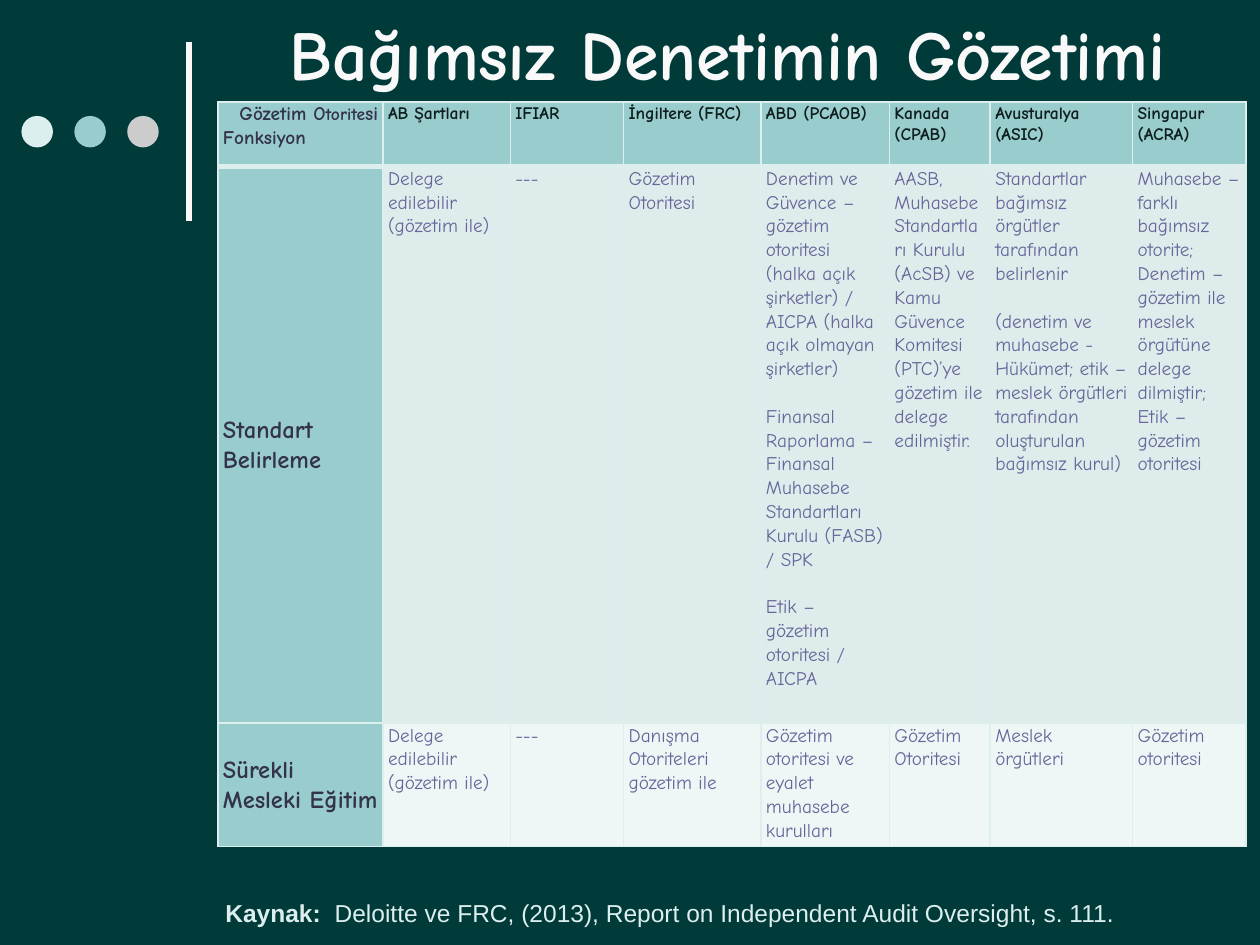
from lxml import etree
from pptx import Presentation
from pptx.dml.color import RGBColor
from pptx.enum import shapes, text
from pptx.oxml.ns import qn
from pptx.util import Inches, Pt

DARK_TEAL = RGBColor(0x00, 0x3B, 0x3A)
WHITE = RGBColor(0xF9, 0xF9, 0xF9)
PALE = RGBColor(0xDC, 0xEE, 0xEE)
TEAL = RGBColor(0x99, 0xCC, 0xCC)
GREY = RGBColor(0xCC, 0xCC, 0xCC)
BAND_DARK = RGBColor(0xDE, 0xEC, 0xEC)
BAND_LIGHT = RGBColor(0xEF, 0xF6, 0xF6)
INK = RGBColor(0x0F, 0x1F, 0x1F)
NAVY = RGBColor(0x33, 0x33, 0x4C)
VIOLET = RGBColor(0x66, 0x66, 0x99)

COMIC = "Comic Neue"
LEFT, CENTER, RIGHT, JUSTIFY = (
    text.PP_ALIGN.LEFT, text.PP_ALIGN.CENTER, text.PP_ALIGN.RIGHT, text.PP_ALIGN.JUSTIFY)
MIDDLE, TOP = text.MSO_ANCHOR.MIDDLE, text.MSO_ANCHOR.TOP

TITLE = dict(name=COMIC, size=Pt(40), bold=True, color=WHITE)
CORNER = dict(name=COMIC, size=Pt(11), bold=True, color=NAVY)
HEADER = dict(name=COMIC, size=Pt(10), bold=True, color=INK)
FUNCTION = dict(name=COMIC, size=Pt(14), bold=True, color=NAVY)
BODY = dict(name=COMIC, size=Pt(11), bold=False, color=VIOLET)
SOURCE = dict(name="Arial", size=Pt(14), bold=False, color=PALE)

LINE_SPACING = 1.07
BLOCK_GAP = Pt(13.6)  # one body line

COLUMNS = [1.31, 1.01, 0.9, 1.09, 1.02, 0.8, 1.13, 0.9]
ROWS = [0.51, 4.42, 0.91]
AUTHORITIES = ["AB Şartları", "IFIAR", "İngiltere (FRC)", "ABD (PCAOB)",
               "Kanada (CPAB)", "Avusturalya (ASIC)", "Singapur (ACRA)"]
# Each cell is a list of blocks; each block is a list of paragraphs.
FUNCTIONS = [
    ("Standart Belirleme", BAND_DARK, [
        [["Delege edilebilir (gözetim ile)"]],
        [["---"]],
        [["Gözetim Otoritesi"]],
        [["Denetim ve Güvence – gözetim otoritesi (halka açık şirketler) / "
          "AICPA (halka açık olmayan şirketler)"],
         ["Finansal Raporlama – Finansal Muhasebe Standartları Kurulu (FASB) / SPK"],
         ["Etik – gözetim otoritesi / AICPA"]],
        [["AASB, Muhasebe Standartları Kurulu (AcSB) ve Kamu Güvence Komitesi "
          "(PTC)’ye gözetim ile delege edilmiştir."]],
        [["Standartlar bağımsız örgütler tarafından belirlenir"],
         ["(denetim ve muhasebe -",
          "Hükümet; etik – meslek örgütleri tarafından oluşturulan bağımsız kurul)"]],
        [["Muhasebe – farklı bağımsız otorite;",
          "Denetim – gözetim ile meslek örgütüne delege dilmiştir;",
          "Etik – gözetim otoritesi"]],
    ]),
    ("Sürekli Mesleki Eğitim", BAND_LIGHT, [
        [["Delege edilebilir (gözetim ile)"]],
        [["---"]],
        [["Danışma Otoriteleri gözetim ile"]],
        [["Gözetim otoritesi ve eyalet muhasebe kurulları"]],
        [["Gözetim Otoritesi"]],
        [["Meslek örgütleri"]],
        [["Gözetim otoritesi"]],
    ]),
]


def add_span(para, words, style, **changes):
    span = para.add_run()
    span.text = words
    for key, value in {**style, **changes}.items():
        if key == "color":
            span.font.color.rgb = value
        else:
            setattr(span.font, key, value)


def next_para(frame, **layout):
    """Return the empty first paragraph, or a new one after written text."""
    first = frame.paragraphs[0]
    para = frame.add_paragraph() if first.runs else first
    for key, value in layout.items():
        setattr(para, key, value)
    return para


def add_text_box(page, left, top, width, height, anchor):
    box = page.shapes.add_textbox(Inches(left), Inches(top), Inches(width), Inches(height))
    box.text_frame.word_wrap = True
    box.text_frame.vertical_anchor = anchor
    return box.text_frame


def add_ornament(page, left, top):
    line_x = Inches(left + 1.33)
    line = page.shapes.add_connector(
        shapes.MSO_CONNECTOR.STRAIGHT, line_x, Inches(top + 1.42), line_x, Inches(top))
    line.line.color.rgb = WHITE
    line.line.width = Pt(3)
    etree.SubElement(line._element.spPr, qn("a:effectLst"))
    for index, color in enumerate([PALE, TEAL, GREY]):
        dot = page.shapes.add_shape(
            shapes.MSO_SHAPE.OVAL, Inches(left + 0.42 * index), Inches(top + 0.59),
            Inches(0.25), Inches(0.25))
        dot.shadow.inherit = False
        dot.fill.solid()
        dot.fill.fore_color.rgb = color
        dot.line.fill.background()


def add_title(page, left, top, width, height):
    frame = add_text_box(page, left, top, width, height, MIDDLE)
    add_span(next_para(frame, alignment=CENTER), "Bağımsız Denetimin Gözetimi", TITLE)


def format_cell(cell, fill, anchor=TOP, **edges):
    """Set margins, borders and fill; edges gives widths other than 1 pt."""
    margins = dict(margin_left=Inches(0.04), margin_right=Inches(0.04),
                   margin_top=0, margin_bottom=0, vertical_anchor=anchor)
    for key, value in margins.items():
        setattr(cell, key, value)
    properties = cell._tc.get_or_add_tcPr()
    for side in ("lnL", "lnR", "lnT", "lnB"):
        border = etree.SubElement(properties, qn(f"a:{side}"), w=str(Pt(edges.get(side, 1))))
        solid = etree.SubElement(border, qn("a:solidFill"))
        etree.SubElement(solid, qn("a:srgbClr"), val=str(PALE))
    cell.fill.solid()
    cell.fill.fore_color.rgb = fill


def write_blocks(cell, blocks, style, alignment):
    for block_index, block in enumerate(blocks):
        for index, words in enumerate(block):
            para = next_para(cell.text_frame, alignment=alignment, line_spacing=LINE_SPACING)
            if block_index and index == 0:
                para.space_before = BLOCK_GAP
            add_span(para, words, style)


def fill_header(table):
    for column in range(len(COLUMNS)):
        format_cell(table.cell(0, column), TEAL, lnB=3)
    corner = table.cell(0, 0).text_frame
    para = next_para(corner, alignment=RIGHT, line_spacing=LINE_SPACING)
    add_span(para, "Gözetim O", CORNER)
    add_span(para, "torite", CORNER, size=Pt(10))
    add_span(para, "si", CORNER)
    add_span(next_para(corner, alignment=LEFT, line_spacing=LINE_SPACING), "Fonksiyon", CORNER)
    for column, authority in enumerate(AUTHORITIES, 1):
        write_blocks(table.cell(0, column), [[authority]], HEADER, JUSTIFY)


def add_oversight_table(page, left, top):
    table = page.shapes.add_table(
        len(ROWS), len(COLUMNS), Inches(left), Inches(top),
        Inches(sum(COLUMNS)), Inches(sum(ROWS))).table
    for column, width in zip(table.columns, COLUMNS):
        column.width = Inches(width)
    for row, height in zip(table.rows, ROWS):
        row.height = Inches(height)
    fill_header(table)
    for row, (function, band, entries) in enumerate(FUNCTIONS, 1):
        top_edge = 3 if row == 1 else 1
        name_cell = table.cell(row, 0)
        format_cell(name_cell, TEAL, MIDDLE, lnT=top_edge)
        write_blocks(name_cell, [[function]], FUNCTION, LEFT)
        for column, blocks in enumerate(entries, 1):
            cell = table.cell(row, column)
            format_cell(cell, band, lnT=top_edge)
            write_blocks(cell, blocks, BODY, JUSTIFY if column <= 3 else LEFT)


def add_source(page, left, top, width, height):
    frame = add_text_box(page, left, top, width, height, TOP)
    para = next_para(frame, alignment=JUSTIFY, line_spacing=LINE_SPACING, space_after=Pt(8))
    add_span(para, "Kaynak:  ", SOURCE, bold=True)
    add_span(para, "Deloitte ve FRC, (2013), Report on Independent Audit Oversight, s. 111.",
             SOURCE)


def main():
    deck = Presentation()
    deck.slide_width, deck.slide_height = Inches(10), Inches(7.5)
    page = deck.slides.add_slide(deck.slide_layouts[6])
    page.background.fill.solid()
    page.background.fill.fore_color.rgb = DARK_TEAL
    add_ornament(page, 0.17, 0.33)
    add_title(page, 1.62, 0, 8.31, 0.84)
    add_oversight_table(page, 1.73, 0.81)
    add_source(page, 1.69, 7.06, 8.39, 0.34)
    deck.save("out.pptx")


if __name__ == "__main__":
    main()
